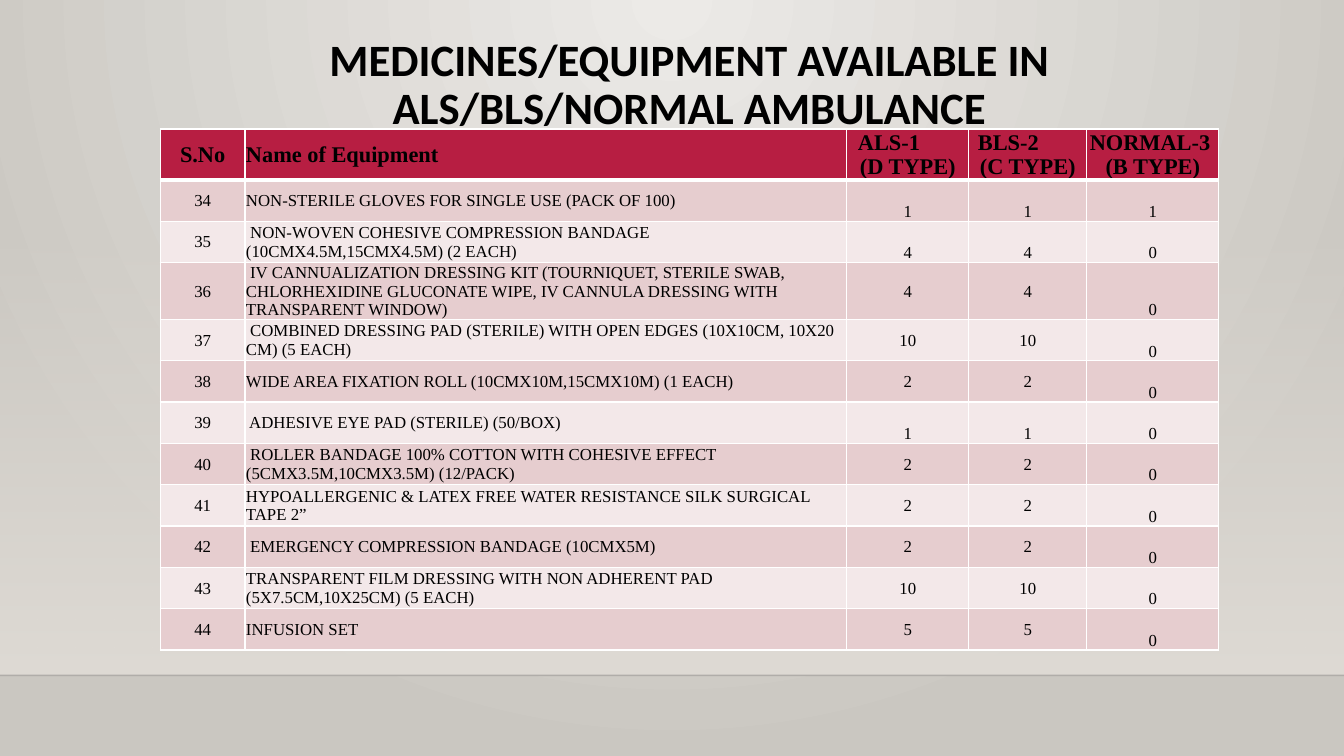
"""Build a slide listing the equipment carried by three types of ambulance."""
from lxml.etree import SubElement
from pptx import Presentation
from pptx.dml.color import RGBColor
from pptx.enum.shapes import MSO_CONNECTOR, MSO_SHAPE
from pptx.enum.text import MSO_ANCHOR, MSO_AUTO_SIZE, PP_ALIGN
from pptx.oxml import parse_xml
from pptx.oxml.ns import nsdecls, qn
from pptx.util import Inches, Pt

TITLE = "MEDICINES/EQUIPMENT AVAILABLE IN ALS/BLS/NORMAL AMBULANCE"
HEADER = ("S.No", "Name of Equipment", "ALS-1\n(D TYPE)", "BLS-2\n(C TYPE)",
          "NORMAL-3 \n(B TYPE)")
FIRST_NUMBER = 34
EQUIPMENT = [
    ("NON-STERILE GLOVES FOR SINGLE USE (PACK OF 100)", 1, 1, 1),
    (" NON-WOVEN COHESIVE COMPRESSION BANDAGE (10CMX4.5M,15CMX4.5M) (2 EACH)", 4, 4, 0),
    (" IV CANNUALIZATION DRESSING KIT (TOURNIQUET, STERILE SWAB, CHLORHEXIDINE "
     "GLUCONATE WIPE, IV CANNULA DRESSING WITH TRANSPARENT WINDOW)", 4, 4, 0),
    (" COMBINED DRESSING PAD (STERILE) WITH OPEN EDGES (10X10CM, 10X20 CM) (5 EACH)",
     10, 10, 0),
    ("WIDE AREA FIXATION ROLL (10CMX10M,15CMX10M) (1 EACH)", 2, 2, 0),
    (" ADHESIVE EYE PAD (STERILE) (50/BOX)", 1, 1, 0),
    (" ROLLER BANDAGE 100% COTTON WITH COHESIVE EFFECT (5CMX3.5M,10CMX3.5M) (12/PACK)",
     2, 2, 0),
    ("HYPOALLERGENIC & LATEX FREE WATER RESISTANCE SILK SURGICAL TAPE 2”", 2, 2, 0),
    (" EMERGENCY COMPRESSION BANDAGE (10CMX5M)", 2, 2, 0),
    ("TRANSPARENT FILM DRESSING WITH NON ADHERENT PAD (5X7.5CM,10X25CM) (5 EACH)",
     10, 10, 0),
    ("INFUSION SET", 5, 5, 0),
]
LOW_COUNT_NUMBERS = (34, 35, 39)
COLUMN_WIDTHS = (0.84, 5.97, 1.21, 1.17, 1.31)
ROW_HEIGHT = 0.41
NAME_COLUMN, NORMAL_COLUMN = 1, 4
HEADER_INDENTS = {2: 0.1, 3: 0.08}

BLACK = RGBColor(0x00, 0x00, 0x00)
WHITE = RGBColor(0xFF, 0xFF, 0xFF)
CRIMSON = RGBColor(0xB7, 0x1E, 0x42)
BANDS = (RGBColor(0xF3, 0xE8, 0xE9), RGBColor(0xE6, 0xCD, 0xCF))
GLOW = RGBColor(0xEC, 0xEA, 0xE7)
STONE = RGBColor(0xCA, 0xC7, 0xC1)
WALL = RGBColor(0xDF, 0xDB, 0xD5)
FLOOR_LINE = RGBColor(0x00, 0x00, 0x01)


def set_gradient(fill, element, stops, direction):
    """Give a fill two colour stops, each a colour and an opacity percentage."""
    fill.gradient()
    marks = "".join(
        f'<a:gs pos="{position}"><a:srgbClr val="{color}">'
        f'<a:alpha val="{opacity * 1000}"/></a:srgbClr></a:gs>'
        for position, (color, opacity) in zip((0, 100000), stops))
    former = element.find(".//" + qn("a:gradFill"))
    former.getparent().replace(former, parse_xml(
        f'<a:gradFill {nsdecls("a")} rotWithShape="1"><a:gsLst>{marks}</a:gsLst>'
        f'{direction}</a:gradFill>'))


def draw_backdrop(page):
    """Draw the glowing wall and the line where it meets the floor."""
    set_gradient(page.background.fill, page.element, ((GLOW, 100), (STONE, 100)),
                 '<a:path path="circle">'
                 '<a:fillToRect l="43000" t="0" r="43000" b="100000"/></a:path>')
    wall = page.shapes.add_shape(MSO_SHAPE.RECTANGLE, 0, Inches(2.21),
                                 Inches(13.33), Inches(4.49))
    wall.shadow.inherit = False
    wall.line.fill.background()
    set_gradient(wall.fill, wall.element, ((WALL, 0), (WALL, 100)),
                 '<a:lin ang="5400000" scaled="0"/>')
    floor = page.shapes.add_connector(MSO_CONNECTOR.STRAIGHT, 0, Inches(6.7),
                                      Inches(13.33), Inches(6.7))
    floor.line.width = Pt(1)
    floor.line.color.rgb = FLOOR_LINE
    color = floor.element.find(".//" + qn("a:srgbClr"))
    SubElement(color, qn("a:alpha")).set("val", "20000")
    SubElement(floor.element.spPr, qn("a:effectLst"))


def set_borders(cell, is_header):
    """Draw white cell edges, with a heavy one below the header."""
    for side in "LRTB":
        width = Pt(3) if is_header and side == "B" else Pt(1)
        cell._tc.get_or_add_tcPr().append(parse_xml(
            f'<a:ln{side} {nsdecls("a")} w="{width}"><a:solidFill>'
            f'<a:srgbClr val="{WHITE}"/></a:solidFill></a:ln{side}>'))


def fill_cell(cell, text, row, column):
    """Write and format one table cell."""
    is_header = row == 0
    if row != 1:
        set_borders(cell, is_header)
    cell.fill.solid()
    cell.fill.fore_color.rgb = CRIMSON if is_header else BANDS[row % 2]
    cell.margin_left = cell.margin_right = cell.margin_top = Inches(0.01)
    cell.margin_bottom = 0
    is_low = column > NAME_COLUMN and row + FIRST_NUMBER - 1 in LOW_COUNT_NUMBERS
    cell.vertical_anchor = (MSO_ANCHOR.BOTTOM if is_low or column == NORMAL_COLUMN
                            else MSO_ANCHOR.MIDDLE)
    cell.text = text
    for index, paragraph in enumerate(cell.text_frame.paragraphs):
        paragraph.alignment = PP_ALIGN.LEFT if column == NAME_COLUMN else PP_ALIGN.CENTER
        if is_header and index == 0 and column in HEADER_INDENTS:
            paragraph.alignment = PP_ALIGN.LEFT
            properties = paragraph._p.get_or_add_pPr()
            properties.set("marL", str(Inches(HEADER_INDENTS[column])))
        paragraph.font.name = "Times New Roman"
        paragraph.font.size = Pt(16 if is_header else 12)
        paragraph.font.bold = is_header
        paragraph.font.color.rgb = BLACK


def add_title(page):
    """Place the slide title."""
    title = page.shapes.title
    title.left, title.top = Inches(1.59), Inches(0.28)
    title.width, title.height = Inches(10.5), Inches(1.15)
    frame = title.text_frame
    frame.text = TITLE
    frame.word_wrap = True
    frame.auto_size = MSO_AUTO_SIZE.NONE
    frame.vertical_anchor = MSO_ANCHOR.MIDDLE
    paragraph = frame.paragraphs[0]
    paragraph.alignment = PP_ALIGN.CENTER
    paragraph.line_spacing = 0.9
    paragraph.font.name = "Calibri"
    paragraph.font.size = Pt(32)
    paragraph.font.bold = True
    paragraph.font.color.rgb = BLACK


def add_equipment_table(page):
    """Add the table of equipment and quantities."""
    rows = [HEADER] + [(number, *item)
                       for number, item in enumerate(EQUIPMENT, FIRST_NUMBER)]
    table = page.shapes.add_table(
        len(rows), len(HEADER), Inches(1.59), Inches(1.28),
        Inches(sum(COLUMN_WIDTHS)), Inches(ROW_HEIGHT * len(rows))).table
    for column, width in zip(table.columns, COLUMN_WIDTHS):
        column.width = Inches(width)
    for row, values in enumerate(rows):
        table.rows[row].height = Inches(ROW_HEIGHT)
        for column, value in enumerate(values):
            fill_cell(table.cell(row, column), str(value), row, column)


def main():
    """Build and save the deck."""
    deck = Presentation()
    deck.slide_width, deck.slide_height = Inches(13.33), Inches(7.5)
    page = deck.slides.add_slide(deck.slide_layouts[5])
    draw_backdrop(page)
    add_title(page)
    add_equipment_table(page)
    deck.save("out.pptx")


if __name__ == "__main__":
    main()
